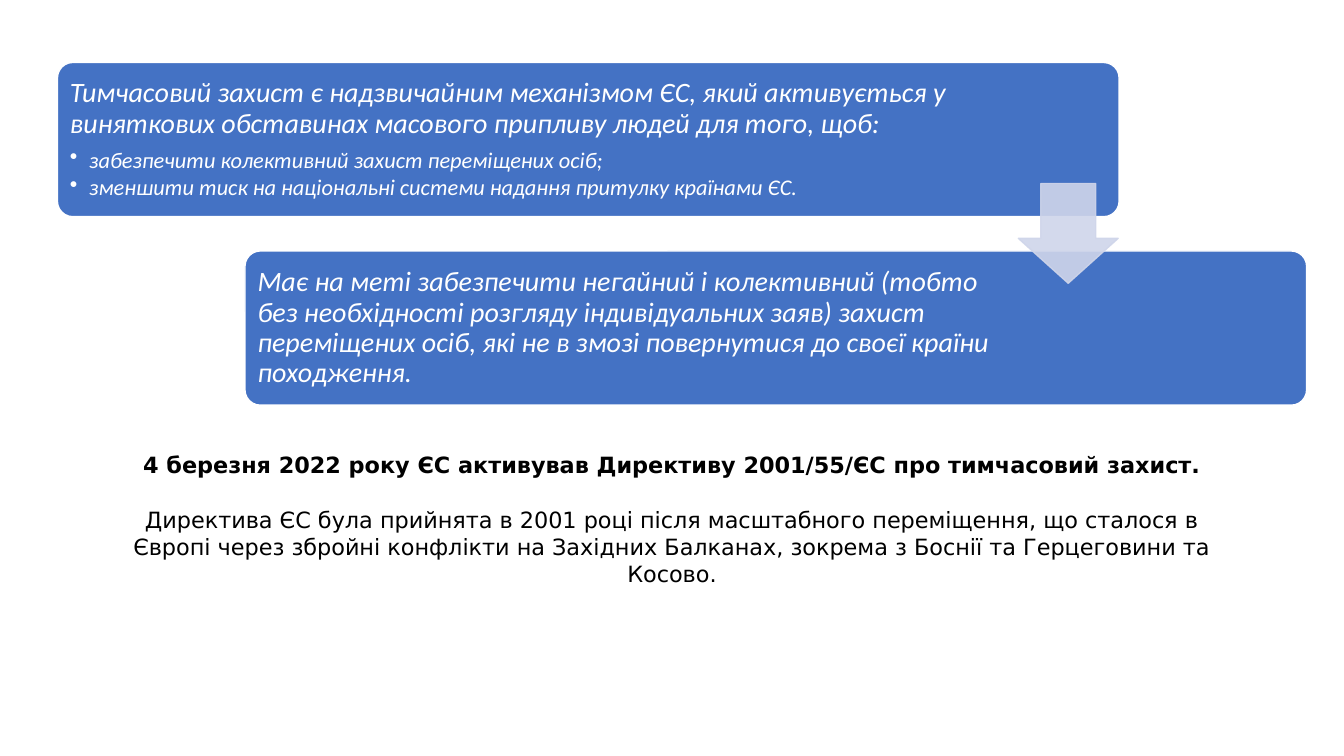
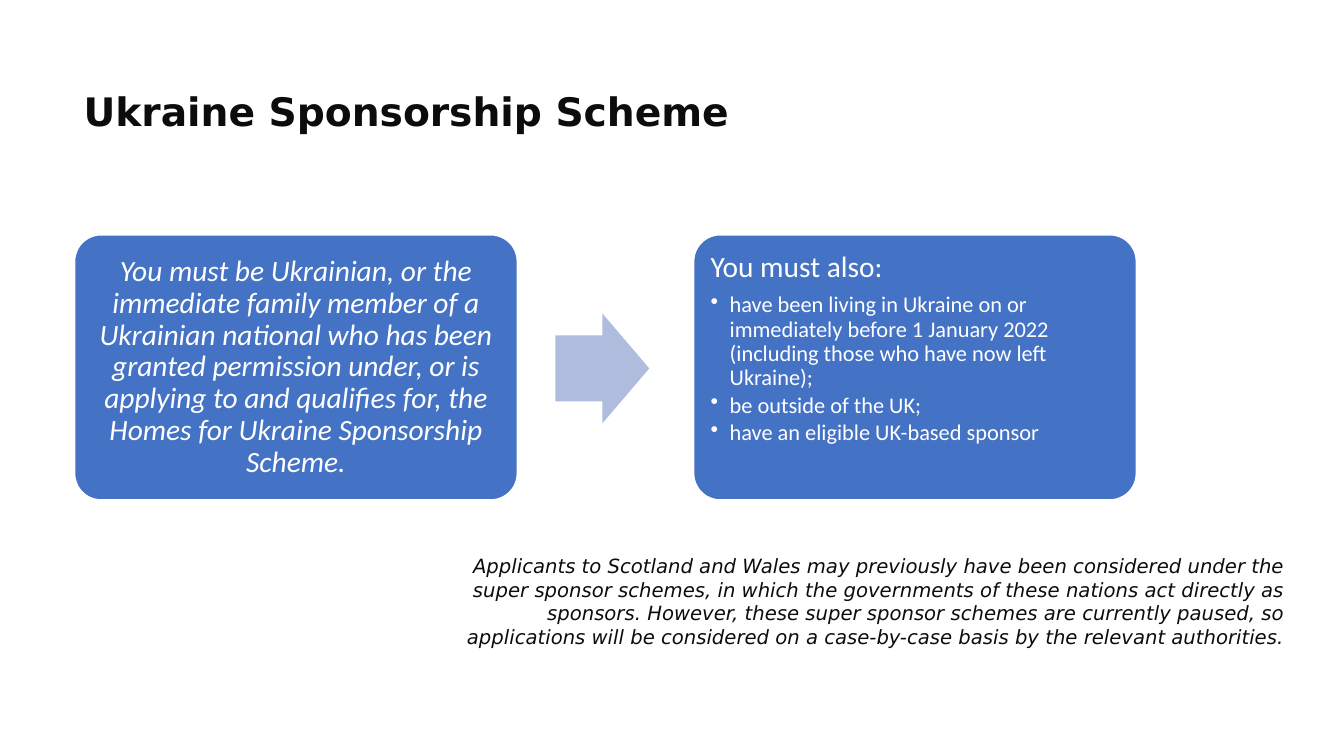
from pptx import Presentation
from pptx.dml.color import RGBColor
from pptx.enum.shapes import MSO_SHAPE
from pptx.enum.text import MSO_ANCHOR, MSO_AUTO_SIZE, PP_ALIGN
from pptx.oxml.ns import qn
from pptx.oxml.xmlchemy import OxmlElement
from pptx.util import Emu, Pt

EMU_PER_PX = 9144  # 100 px to the inch
TITLE_ONLY, BLANK = 5, 6
COLORS = {
    "card": "4472C4",
    "white": "FFFFFF",
    "step_arrow": "CFD5EA",
    "flow_arrow": "B0BCDE",
    "ink": "0B0C0C",
    "black": "000000",
}
TEXT_FONT = "DejaVu Sans"
CARD_FONT = "Calibri"
BULLET_SIZE = 16


def px(length):
    return Emu(length * EMU_PER_PX)


def color(name):
    return RGBColor.from_string(COLORS[name])


class Deck:
    """Holds the shared style and the slide being filled."""

    def __init__(self):
        self.presentation = Presentation()
        self.presentation.slide_width = px(1333)
        self.presentation.slide_height = px(750)
        self.slide = None

    def add_slide(self, layout):
        self.slide = self.presentation.slides.add_slide(
            self.presentation.slide_layouts[layout])

    def style(self, paragraph, font_name, size, ink, align=PP_ALIGN.LEFT,
              bold=False, italic=False):
        paragraph.alignment = align
        font = paragraph.font
        font.name, font.size = font_name, Pt(size)
        font.bold, font.italic = bold, italic
        font.color.rgb = color(ink)

    def title(self, text, left, top, width, height):
        title = self.slide.shapes.title
        title.left, title.top = px(left), px(top)
        title.width, title.height = px(width), px(height)
        frame = title.text_frame
        frame.text = text
        frame.auto_size = MSO_AUTO_SIZE.NONE
        frame.vertical_anchor = MSO_ANCHOR.MIDDLE
        heading = frame.paragraphs[0]
        heading.line_spacing = 0.9
        self.style(heading, TEXT_FONT, 28, "ink", bold=True)

    def note(self, box, texts, size, ink, align, gap=0, bold_first=False,
             italic=False):
        frame = self.slide.shapes.add_textbox(*map(px, box)).text_frame
        frame.word_wrap = True
        frame.text = "\n".join(texts)
        for index, paragraph in enumerate(frame.paragraphs):
            paragraph.space_before = Pt(gap if index else 0)
            self.style(paragraph, TEXT_FONT, size, ink, align,
                       bold=bold_first and index == 0, italic=italic)

    def shape(self, kind, box, fill, adjustments, line=None):
        shape = self.slide.shapes.add_shape(kind, *map(px, box))
        shape.shadow.inherit = False
        for index, value in enumerate(adjustments):
            shape.adjustments[index] = value
        shape.fill.solid()
        shape.fill.fore_color.rgb = color(fill)
        if line:
            shape.line.color.rgb = color(line)
            shape.line.width = Pt(1)
        else:
            shape.line.fill.background()
        return shape

    def card(self, box, lead, bullets=(), size=20, inset=8, right_inset=None,
             align=PP_ALIGN.LEFT, anchor=MSO_ANCHOR.MIDDLE, italic=True):
        """Rounded box with a lead sentence and an optional bullet list."""
        card = self.shape(MSO_SHAPE.ROUNDED_RECTANGLE, box, "card", [0.1], "white")
        frame = card.text_frame
        frame.word_wrap = True
        frame.vertical_anchor = anchor
        frame.margin_left = frame.margin_top = frame.margin_bottom = px(inset)
        frame.margin_right = px(right_inset or inset)
        frame.text = "\n".join([lead, *bullets])
        for index, paragraph in enumerate(frame.paragraphs):
            text_size, gap = (BULLET_SIZE, 0.15) if index else (size, 0.35)
            paragraph.line_spacing = 0.9
            paragraph.space_after = Pt(round(text_size * gap, 1))
            if index:
                self.add_bullet(paragraph)
            self.style(paragraph, CARD_FONT, text_size, "white", align, italic=italic)

    def add_bullet(self, paragraph):
        paragraph.level = 1
        properties = paragraph._p.get_or_add_pPr()
        properties.set("marL", str(px(19)))
        properties.set("indent", str(px(-19)))
        bullet = OxmlElement("a:buChar")
        bullet.set("char", "•")
        properties.append(bullet)

    def arrow(self, kind, box, fill, adjustments, line=None, opacity=100):
        arrow = self.shape(kind, box, fill, adjustments, line)
        if opacity < 100:
            for tint in arrow._element.spPr.iter(qn("a:srgbClr")):
                alpha = OxmlElement("a:alpha")
                alpha.set("val", str(opacity * 1000))
                tint.append(alpha)


def add_temporary_protection(deck):
    deck.add_slide(BLANK)
    deck.note(
        (109, 443, 1115, 175),
        ["4 березня 2022 року ЄС активував Директиву 2001/55/ЄC про тимчасовий захист.",
         "Директива ЄС була прийнята в 2001 році після масштабного переміщення, "
         "що сталося в Європі через збройні конфлікти на Західних Балканах, "
         "зокрема з Боснії та Герцеговини та Косово."],
        16, "black", PP_ALIGN.CENTER, gap=20, bold_first=True)
    steps = [
        ("Тимчасовий захист є надзвичайним механізмом ЄС, який активується у "
         "виняткових обставинах масового припливу людей для того, щоб:",
         ["забезпечити колективний захист переміщених осіб;",
          "зменшити тиск на національні системи надання притулку країнами ЄС."],
         158),
        ("Має на меті забезпечити негайний і колективний (тобто без необхідності "
         "розгляду індивідуальних заяв) захист переміщених осіб, які не в змозі "
         "повернутися до своєї країни походження.",
         [], 294),
    ]
    for index, (lead, bullets, right_inset) in enumerate(steps):
        deck.card((57 + 186 * index, 62 + 187 * index, 1053, 153), lead, bullets,
                  right_inset=right_inset)
    deck.arrow(MSO_SHAPE.DOWN_ARROW, (1010, 182, 99, 99), "step_arrow",
               [0.55, 0.45], line="step_arrow", opacity=90)


def add_sponsorship_scheme(deck):
    deck.add_slide(TITLE_ONLY)
    deck.title("Ukraine Sponsorship Scheme", 73, 40, 1150, 145)
    deck.note(
        (437, 545, 847, 104),
        ["Applicants to Scotland and Wales may previously have been considered "
         "under the super sponsor schemes, in which the governments of these "
         "nations act directly as sponsors. However, these super sponsor schemes "
         "are currently paused, so applications will be considered on a "
         "case-by-case basis by the relevant authorities."],
        14, "ink", PP_ALIGN.RIGHT, italic=True)
    top, width, height = 233, 439, 263
    deck.card(
        (74, top, width, height),
        "You must be Ukrainian, or the immediate family member of a Ukrainian "
        "national who has been granted permission under, or is applying to and "
        "qualifies for, the Homes for Ukraine Sponsorship Scheme.",
        size=21, inset=9, align=PP_ALIGN.CENTER)
    deck.arrow(MSO_SHAPE.RIGHT_ARROW, (551, 311, 93, 109), "flow_arrow", [0.6, 0.5])
    deck.card(
        (688, top, width, height), "You must also:",
        ["have been living in Ukraine on or immediately before 1 January 2022 "
         "(including those who have now left Ukraine);",
         "be outside of the UK;",
         "have an eligible UK-based sponsor"],
        size=21, inset=9, anchor=MSO_ANCHOR.TOP, italic=False)


def main():
    deck = Deck()
    add_temporary_protection(deck)
    add_sponsorship_scheme(deck)
    deck.presentation.save("out.pptx")


if __name__ == "__main__":
    main()
